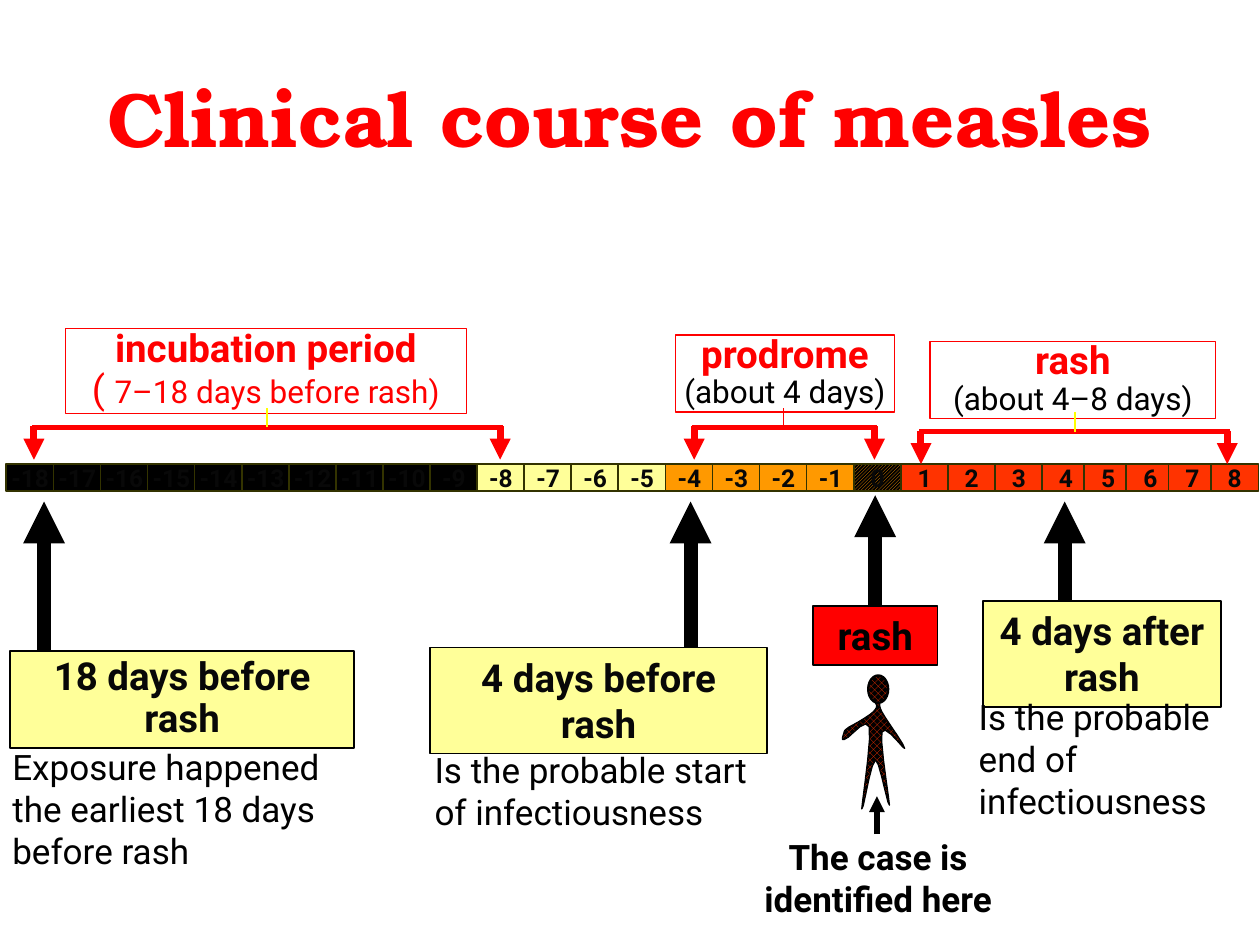
from dataclasses import dataclass

import lxml.etree
import pptx
import pptx.dml.color
import pptx.enum.dml
import pptx.enum.shapes
import pptx.enum.text
import pptx.oxml.ns
import pptx.util

Pt = pptx.util.Pt
qn = pptx.oxml.ns.qn
Align = pptx.enum.text.PP_ALIGN
Anchor = pptx.enum.text.MSO_ANCHOR
AutoSize = pptx.enum.text.MSO_AUTO_SIZE
Pattern = pptx.enum.dml.MSO_PATTERN
Preset = pptx.enum.shapes.MSO_SHAPE
Box = tuple[float, float, float, float]
Point = tuple[float, float]
RED, BLACK, INK, YELLOW, CREAM = "FF0000", "000000", "080808", "FFFF00", "FFFF99"


@dataclass
class Words:
    text: str
    size: float
    color: str = BLACK
    bold: bool = False
    font: str = "Roboto"


@dataclass
class Phase:
    box: Box
    name: str
    duration: list[Words]
    first_x: float
    last_x: float
    bar_y: float
    stem_x: float
    stem_color: str
    border: float = 0.75


@dataclass
class Event:
    box: Box
    label: str
    arrow_x: float
    arrow_top: float
    spacing: float | None = None
    fill: str = CREAM
    ink: str = INK
    joined: bool = False


@dataclass
class Note:
    box: Box
    words: Words
    align: Align = Align.LEFT


PHASES = [
    Phase((37.4, 187.9, 229, 48.2), "incubation period",
          [Words("( ", 22, RED), Words("7–18 days before rash)", 18, RED)],
          19.4, 285.8, 244.1, 152.6, YELLOW, 0.5),
    Phase((385.9, 191.5, 125.3, 43.9), "prodrome", [Words("(about 4 days)", 18)],
          396.7, 499.7, 244.1, 447.8, RED),
    Phase((531.4, 195.1, 163.4, 43.9), "rash", [Words("(about 4–8 days)", 18)],
          526.3, 701.3, 246.6, 614.2, YELLOW),
]
EVENTS = [
    Event((5.8, 372.2, 196.6, 55.4), "18 days before rash", 25.2, 286.6, 0.9),
    Event((245.5, 370.1, 193, 60.5), "4 days before rash", 394.6, 286.6),
    Event((561.6, 343.4, 136.1, 60.5), "4 days after rash", 608.4, 286.6),
    Event((464.4, 346.3, 71.4, 33.8), "rash", 500.1, 283, None, RED, BLACK, True),
]
NOTES = [
    Note((0, 422.6, 211, 80), Words("Exposure happened the earliest 18 days before rash", 20)),
    Note((241.2, 424.1, 212.4, 55.4), Words("Is the probable start of infectiousness", 20)),
    Note((552.2, 393.8, 170, 80), Words("Is the probable end of infectiousness", 20)),
    Note((418.3, 473.8, 167, 55.4), Words("The case is identified here", 20, bold=True),
         Align.CENTER),
]
BODY_START = (500.4, 401.8)
BODY_CURVES = [
    ((501.1, 403.2), (501.8, 403.9), (499, 406.8)),
    ((496.8, 409), (488.2, 414), (485.3, 415.4)),
    ((482.4, 417.6), (483.1, 416.9), (482.4, 418.3)),
    ((482.4, 419), (480.2, 423.4), (482.4, 422.6)),
    ((485.3, 422.6), (494.6, 409), (496.8, 415.4)),
    ((498.2, 422.6), (492.5, 459.4), (492.5, 462.2)),
    ((493.2, 465.1), (497.5, 434.9), (500.4, 434.2)),
    ((502.6, 434.2), (507.6, 462.2), (508.3, 460.1)),
    ((508.3, 457.2), (502.6, 423.4), (504, 418.3)),
    ((505.4, 412.6), (517, 429.1), (517, 427.7)),
    ((517, 425.5), (506.2, 411.1), (504, 406.8)),
    ((501.8, 402.5), (503.3, 402.5), (502.6, 401.8)),
]


def rgb(code: str) -> pptx.dml.color.RGBColor:
    return pptx.dml.color.RGBColor.from_string(code)


def outline(shape, color: str, width: float) -> None:
    shape.line.color.rgb = rgb(color)
    shape.line.width = Pt(width)


def pattern(shape, kind: Pattern, fore: str) -> None:
    shape.fill.patterned()
    shape.fill.pattern = kind
    shape.fill.fore_color.rgb = rgb(fore)
    shape.fill.back_color.rgb = rgb(BLACK)


def write(shape, lines: list[list[Words]], align: Align = Align.CENTER,
          anchor: Anchor = Anchor.TOP, spacing: float | None = None,
          wrap: bool = True, grow: bool = True) -> None:
    frame = shape.text_frame
    frame.word_wrap = wrap
    frame.vertical_anchor = anchor
    frame.auto_size = AutoSize.SHAPE_TO_FIT_TEXT if grow else AutoSize.NONE
    for number, line in enumerate(lines):
        paragraph = frame.add_paragraph() if number else frame.paragraphs[0]
        paragraph.alignment = align
        paragraph.line_spacing = spacing
        for words in line:
            run = paragraph.add_run()
            run.text = words.text
            run.font.name = words.font
            run.font.size = Pt(words.size)
            run.font.bold = words.bold
            run.font.color.rgb = rgb(words.color)


def add_box(slide, box: Box, fill: str | None, border: str, width: float,
            preset: Preset = Preset.RECTANGLE):
    shape = slide.shapes.add_shape(preset, *map(Pt, box))
    shape.shadow.inherit = False
    if fill:
        shape.fill.solid()
        shape.fill.fore_color.rgb = rgb(fill)
    else:
        shape.fill.background()
    outline(shape, border, width)
    return shape


def add_line(slide, start: Point, end: Point, color: str, width: float, arrow: bool = False):
    line = slide.shapes.add_connector(pptx.enum.shapes.MSO_CONNECTOR.STRAIGHT,
                                      *map(Pt, start + end))
    outline(line, color, width)
    properties = line._element.spPr
    if arrow:
        lxml.etree.SubElement(properties.find(qn("a:ln")), qn("a:tailEnd"), type="triangle")
    lxml.etree.SubElement(properties, qn("a:effectLst"))
    return line


def add_note(slide, note: Note, anchor: Anchor = Anchor.TOP, grow: bool = True) -> None:
    text = slide.shapes.add_textbox(*map(Pt, note.box))
    write(text, [[note.words]], note.align, anchor, grow=grow)


def day_color(day: int) -> str:
    return next(color for last, color in
                ((-9, BLACK), (-5, CREAM), (0, "FF9900"), (8, "FF3300")) if day <= last)


def add_timeline(slide) -> None:
    for day in range(-18, 9):
        left = 3.6 + 26.9 * (min(day, 4) + 18) + 24.1 * max(day - 4, 0)
        cell = add_box(slide, (left, 265, 27.4, 15.8), day_color(day), "333300", 1)
        if day == 0:
            pattern(cell, Pattern.LIGHT_UPWARD_DIAGONAL, day_color(day))
        write(cell, [[Words(str(day), 14, INK, True)]], anchor=Anchor.MIDDLE,
              wrap=False, grow=False)


def add_phase(slide, phase: Phase) -> None:
    label = add_box(slide, phase.box, None, RED, phase.border)
    frame = label.text_frame
    frame.margin_left = frame.margin_top = frame.margin_right = frame.margin_bottom = 0
    write(label, [[Words(phase.name, 22, RED, True)], phase.duration], spacing=0.9)
    y = phase.bar_y
    add_line(slide, (phase.last_x + 1.4, y), (phase.first_x - 1.4, y), RED, 3)
    for x in (phase.first_x, phase.last_x):
        add_line(slide, (x, y - 0.5), (x, y + 18.6), RED, 4, arrow=True)
    add_line(slide, (phase.stem_x, y), (phase.stem_x, y - 11), phase.stem_color, 1)


def add_event(slide, event: Event) -> None:
    label = add_box(slide, event.box, event.fill, BLACK, 1)
    write(label, [[Words(event.label, 22, event.ink, True)]], spacing=event.spacing)
    arrow = add_line(slide, (event.arrow_x, event.box[1]),
                     (event.arrow_x, event.arrow_top), BLACK, 8, arrow=True)
    if event.joined:
        arrow.begin_connect(label, 0)


def add_person(slide) -> None:
    head = add_box(slide, (496.1, 385.9, 11.5, 15.8), None, BLACK, 1.25, Preset.OVAL)
    outline_points = []
    start = BODY_START
    for curve in BODY_CURVES:
        knots = (start, *curve)
        for t in (0.2, 0.4, 0.6, 0.8, 1):
            weights = ((1 - t) ** 3, 3 * t * (1 - t) ** 2, 3 * t * t * (1 - t), t ** 3)
            outline_points.append(tuple(
                Pt(sum(w * knot[axis] for w, knot in zip(weights, knots))) for axis in (0, 1)))
        start = curve[-1]
    builder = slide.shapes.build_freeform(*map(Pt, BODY_START), scale=1.0)
    builder.add_line_segments(outline_points, close=True)
    body = builder.convert_to_shape()
    body.shadow.inherit = False
    outline(body, BLACK, 0.75)
    for part in (head, body):
        pattern(part, Pattern.SOLID_DIAMOND, "FF3300")
    add_line(slide, (501.1, 476.6), (501.1, 455), BLACK, 3, arrow=True)


def main() -> None:
    deck = pptx.Presentation()
    deck.slide_width, deck.slide_height = Pt(720), Pt(540)
    slide = deck.slides.add_slide(deck.slide_layouts[6])
    title = Words("Clinical course of measles", 44, RED, True, "TeX Gyre Bonum")
    add_note(slide, Note((36, 21.6, 648, 90), title, Align.CENTER), Anchor.MIDDLE, grow=False)
    add_timeline(slide)
    for phase in PHASES:
        add_phase(slide, phase)
    for event in EVENTS:
        add_event(slide, event)
    add_person(slide)
    for note in NOTES:
        add_note(slide, note)
    deck.save("out.pptx")


if __name__ == "__main__":
    main()
